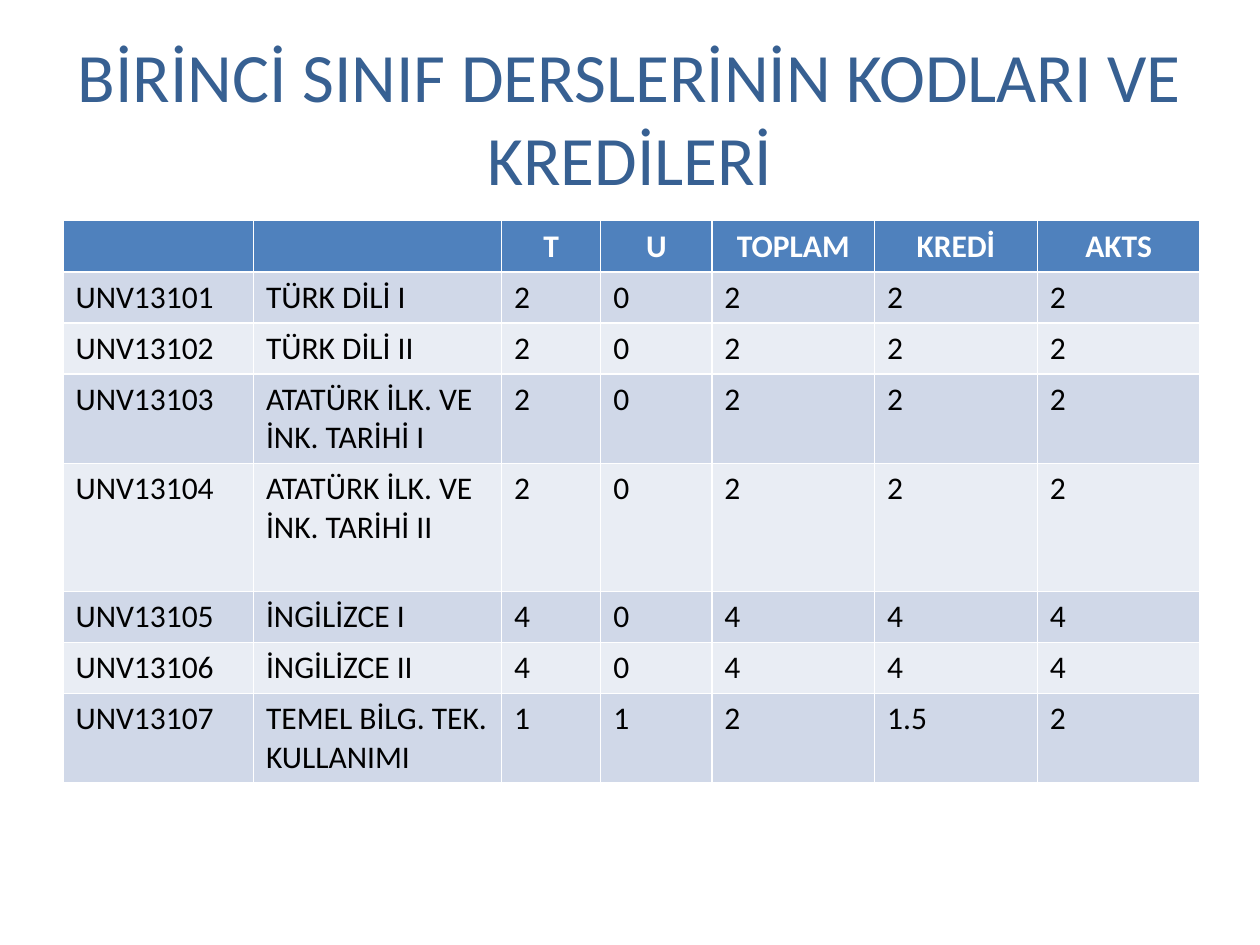
from pptx import Presentation
from pptx.dml.color import RGBColor
from pptx.enum.text import MSO_ANCHOR, PP_ALIGN
from pptx.util import Cm, Pt

NAVY = RGBColor(0x37, 0x60, 0x92)
BLUE = RGBColor(0x4F, 0x81, 0xBD)
DARK = RGBColor(0xD0, 0xD8, 0xE8)
PALE = RGBColor(0xE9, 0xED, 0xF4)
WHITE = RGBColor(0xFF, 0xFF, 0xFF)
BLACK = RGBColor(0x00, 0x00, 0x00)

ROWS = [
    ("", "", "T", "U", "TOPLAM", "KREDİ", "AKTS"),
    ("UNV13101", "TÜRK DİLİ I", "2", "0", "2", "2", "2"),
    ("UNV13102", "TÜRK DİLİ II", "2", "0", "2", "2", "2"),
    ("UNV13103", "ATATÜRK İLK. VE İNK. TARİHİ I", "2", "0", "2", "2", "2"),
    ("UNV13104", "ATATÜRK İLK. VE İNK. TARİHİ II", "2", "0", "2", "2", "2"),
    ("UNV13105", "İNGİLİZCE I", "4", "0", "4", "4", "4"),
    ("UNV13106", "İNGİLİZCE II", "4", "0", "4", "4", "4"),
    ("UNV13107", "TEMEL BİLG. TEK. KULLANIMI", "1", "1", "2", "1.5", "2"),
]
WIDTHS = [3.84, 5, 2, 2.24, 3.28, 3.28, 3.28]
HEIGHTS = [1.03, 1.03, 1.03, 1.8, 2.58, 1.03, 1.03, 1.8]


def style(para, size, color, bold=False):
    for run in para.runs:
        run.font.name = "Calibri"
        run.font.size = Pt(size)
        run.font.bold = bold
        run.font.color.rgb = color


deck = Presentation()
deck.slide_width = Cm(25.4)
deck.slide_height = Cm(19.05)
slide = deck.slides.add_slide(deck.slide_layouts[6])

title = slide.shapes.add_textbox(Cm(1.27), Cm(0.76), Cm(22.86), Cm(3.18))
frame = title.text_frame
frame.word_wrap = True
frame.vertical_anchor = MSO_ANCHOR.MIDDLE
frame.text = "BİRİNCİ SINIF DERSLERİNİN KODLARI VE KREDİLERİ"
frame.paragraphs[0].alignment = PP_ALIGN.CENTER
style(frame.paragraphs[0], 39.6, NAVY)

table = slide.shapes.add_table(
    len(ROWS), len(WIDTHS), Cm(1.27), Cm(4.45), Cm(sum(WIDTHS)), Cm(sum(HEIGHTS))
).table
for col, width in zip(table.columns, WIDTHS):
    col.width = Cm(width)
for row, height in zip(table.rows, HEIGHTS):
    row.height = Cm(height)

for i, texts in enumerate(ROWS):
    head = i == 0
    fill = BLUE if head else DARK if i % 2 else PALE
    for j, text in enumerate(texts):
        cell = table.cell(i, j)
        cell.fill.solid()
        cell.fill.fore_color.rgb = fill
        cell.text_frame.text = text
        para = cell.text_frame.paragraphs[0]
        para.alignment = PP_ALIGN.CENTER if head else PP_ALIGN.LEFT
        style(para, 18, WHITE if head else BLACK, head)

deck.save("out.pptx")
